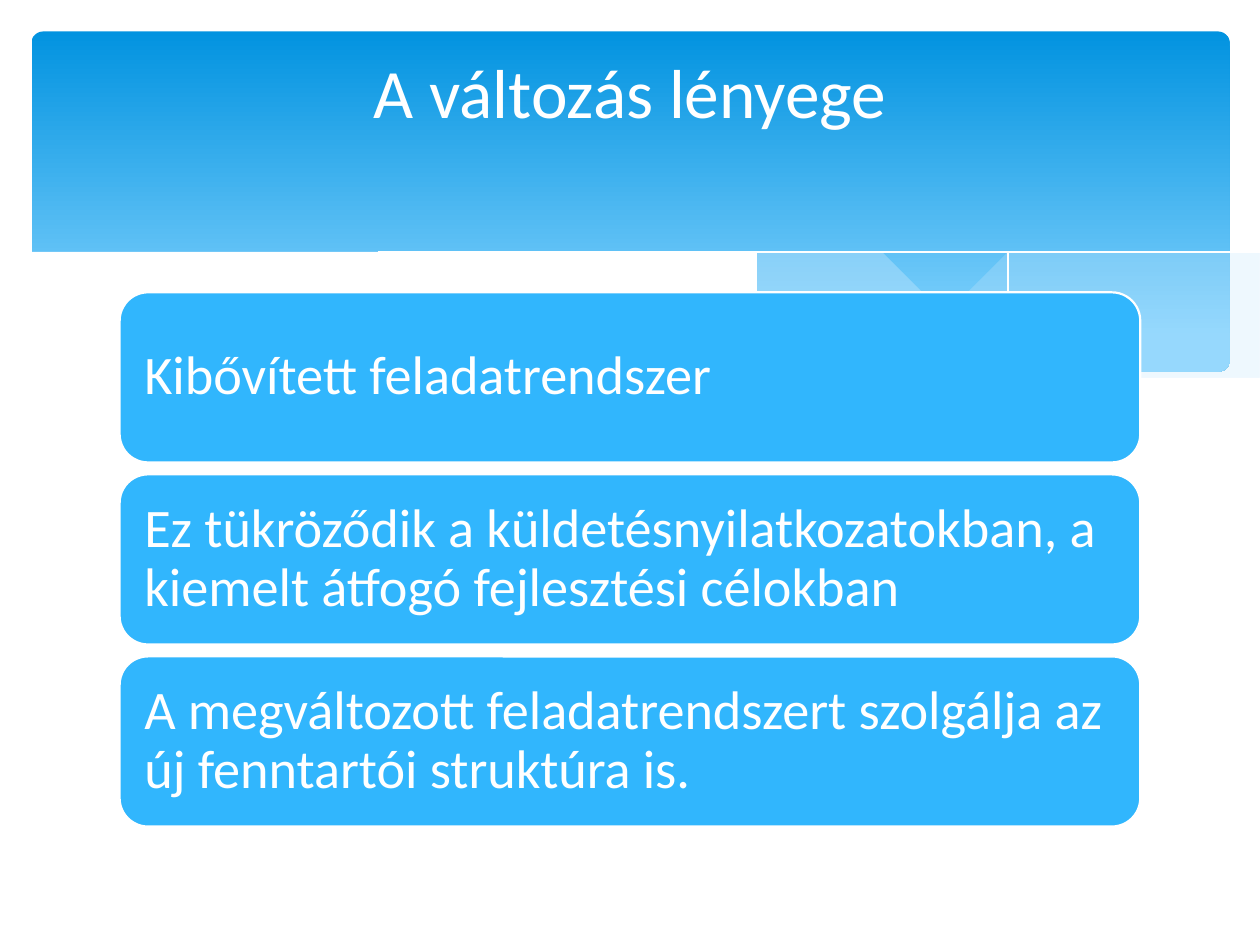
from dataclasses import dataclass
from typing import Optional

from lxml import etree
from pptx import Presentation
from pptx.dml.color import RGBColor
from pptx.enum.shapes import MSO_SHAPE
from pptx.enum.text import MSO_ANCHOR, PP_ALIGN
from pptx.oxml.ns import qn
from pptx.util import Emu, Inches, Pt

ROUND = MSO_SHAPE.ROUNDED_RECTANGLE
TOP, MIDDLE = MSO_ANCHOR.TOP, MSO_ANCHOR.MIDDLE
LEFT, CENTER = PP_ALIGN.LEFT, PP_ALIGN.CENTER

SLIDE_W, SLIDE_H = 10, 7.5
FONT = "Calibri"
WHITE, CARD_BLUE, MIST = "FFFFFF", "31B6FD", "C6E7FC"
SKY_TOP, SKY_BOTTOM = "0293E0", "83D3FE"

Point = tuple[float, float]


@dataclass
class Wave:
    """Smooth edges joined end to end; closed when it has a fill."""
    edges: list[list[Point]]
    fill: Optional[str] = None
    opacity: int = 100


WAVES = [
    # Right-hand mist
    Wave([[(9.76, 2), (9.35, 2.07), (8.61, 2.23), (7.53, 2.48), (6.61, 2.65)],
          [(6.61, 2.65), (7.19, 2.72), (7.69, 2.77), (8.14, 2.78), (8.63, 2.75),
           (9.05, 2.69), (9.42, 2.59), (9.76, 2.47)]], MIST, 29),
    # Central mist
    Wave([[(8.93, 2.73), (8.07, 2.6), (7.06, 2.4), (6.29, 2.22), (5.55, 2.05),
           (4.89, 1.94), (4.2, 1.87), (3.61, 1.85), (2.86, 1.91)],
          [(2.86, 1.91), (3.62, 2.03), (4.49, 2.22), (5.3, 2.4), (6.01, 2.55),
           (6.8, 2.68), (7.48, 2.76), (8.07, 2.78), (8.57, 2.77),
           (8.93, 2.73)]], MIST, 40),
    # Hairlines
    Wave([[(3.09, 1.95), (3.44, 1.9), (4.01, 1.87), (4.69, 1.89), (5.56, 1.97),
           (6.36, 2.08), (7.27, 2.26), (8.31, 2.51), (9.07, 2.72)]]),
    Wave([[(6.13, 2.57), (6.95, 2.35), (7.76, 2.16), (8.66, 1.99), (9.24, 1.9),
           (9.75, 1.85)]]),
    # White foreground
    Wave([[(9.77, 2.46), (9.3, 2.62), (8.75, 2.73), (8.09, 2.77), (7.26, 2.72),
           (6.48, 2.62), (5.55, 2.45), (4.47, 2.2), (3.65, 2.02), (2.92, 1.9),
           (2.3, 1.85), (1.77, 1.84), (1.19, 1.87), (0.76, 1.95), (0.46, 2.03),
           (0.23, 2.13)],
          [(0.23, 3.29), (9.77, 3.29)]], WHITE),
]

CARDS = [
    "Kibővített feladatrendszer",
    "Ez tükröződik a küldetésnyilatkozatokban, a kiemelt átfogó fejlesztési célokban",
    "A megváltozott feladatrendszert szolgálja az új fenntartói struktúra is.",
]
CARD_W, CARD_H, CARD_TOP, CARD_GAP = 0.81 * SLIDE_W, 0.18 * SLIDE_H, 2.32, 0.095


def color(value: str) -> RGBColor:
    return RGBColor.from_string(value)


def smooth(points: list[Point], steps: int = 5) -> list[Point]:
    """Catmull-Rom curve through the points."""
    if len(points) < 3:
        return points
    ends = [points[0], *points, points[-1]]
    curve = [points[0]]
    for a, b, c, d in zip(ends, ends[1:], ends[2:], ends[3:]):
        for i in range(1, steps + 1):
            t = i / steps
            x, y = (
                (2 * q + (r - p) * t + (2 * p - 5 * q + 4 * r - s) * t**2
                 + (3 * q - p - 3 * r + s) * t**3) / 2
                for p, q, r, s in zip(a, b, c, d))
            curve.append((x, y))
    return curve


def draw_wave(s, wave: Wave) -> None:
    points = [pt for edge in wave.edges for pt in smooth(edge)]
    fb = s.shapes.build_freeform(*points[0], scale=Inches(1))
    fb.add_line_segments(points[1:], close=wave.fill is not None)
    sp = fb.convert_to_shape()
    sp.shadow.inherit = False
    if wave.fill is None:
        sp.fill.background()
        sp.line.color.rgb = color(WHITE)
        sp.line.width = Emu(0)
        return
    sp.line.fill.background()
    sp.fill.solid()
    sp.fill.fore_color.rgb = color(wave.fill)
    if wave.opacity < 100:
        srgb = sp.fill._xPr.find(qn("a:solidFill"))[0]
        etree.SubElement(srgb, qn("a:alpha"), val=str(wave.opacity * 1000))


def write(sp, text: str, size: float, align, anchor, inset: float) -> None:
    tf = sp.text_frame
    tf.word_wrap = True
    tf.vertical_anchor = anchor
    tf.margin_left = tf.margin_right = tf.margin_top = tf.margin_bottom = Inches(inset)
    p = tf.paragraphs[0]
    p.alignment = align
    r = p.add_run()
    r.text = text
    r.font.name, r.font.size = FONT, Pt(size)
    r.font.color.rgb = color(WHITE)


def draw_sky(s) -> None:
    sp = s.shapes.add_shape(ROUND, Inches(0.25), Inches(0.25), Inches(9.51), Inches(2.7))
    sp.adjustments[0] = 0.034
    sp.shadow.inherit = False
    sp.line.fill.background()
    sp.fill.gradient()
    sp.fill.gradient_angle = 270
    for stop, place, shade in zip(sp.fill.gradient_stops, (0, 0.9), (SKY_TOP, SKY_BOTTOM)):
        stop.position = place
        stop.color.rgb = color(shade)


def draw_card(s, row: int, text: str) -> None:
    top = CARD_TOP + row * (CARD_H + CARD_GAP)
    sp = s.shapes.add_shape(ROUND, Inches((SLIDE_W - CARD_W) / 2), Inches(top),
                            Inches(CARD_W), Inches(CARD_H))
    sp.shadow.inherit = False
    sp.fill.solid()
    sp.fill.fore_color.rgb = color(CARD_BLUE)
    sp.line.color.rgb = color(WHITE)
    sp.line.width = Pt(1.25)
    write(sp, text, 31, LEFT, MIDDLE, 0.13)
    sp.text_frame.paragraphs[0].line_spacing = 0.9


def main() -> None:
    prs = Presentation()
    prs.slide_width, prs.slide_height = Inches(SLIDE_W), Inches(SLIDE_H)
    s = prs.slides.add_slide(prs.slide_layouts[6])

    # Banner
    draw_sky(s)
    for wave in WAVES:
        draw_wave(s, wave)

    # Cards
    for row, text in enumerate(CARDS):
        draw_card(s, row, text)

    # Title
    title = s.shapes.add_textbox(Inches(0.5), Inches(0.37), Inches(9), Inches(1.37))
    write(title, "A változás lényege", 39.6, CENTER, TOP, 0.02)

    prs.save("out.pptx")


if __name__ == "__main__":
    main()
